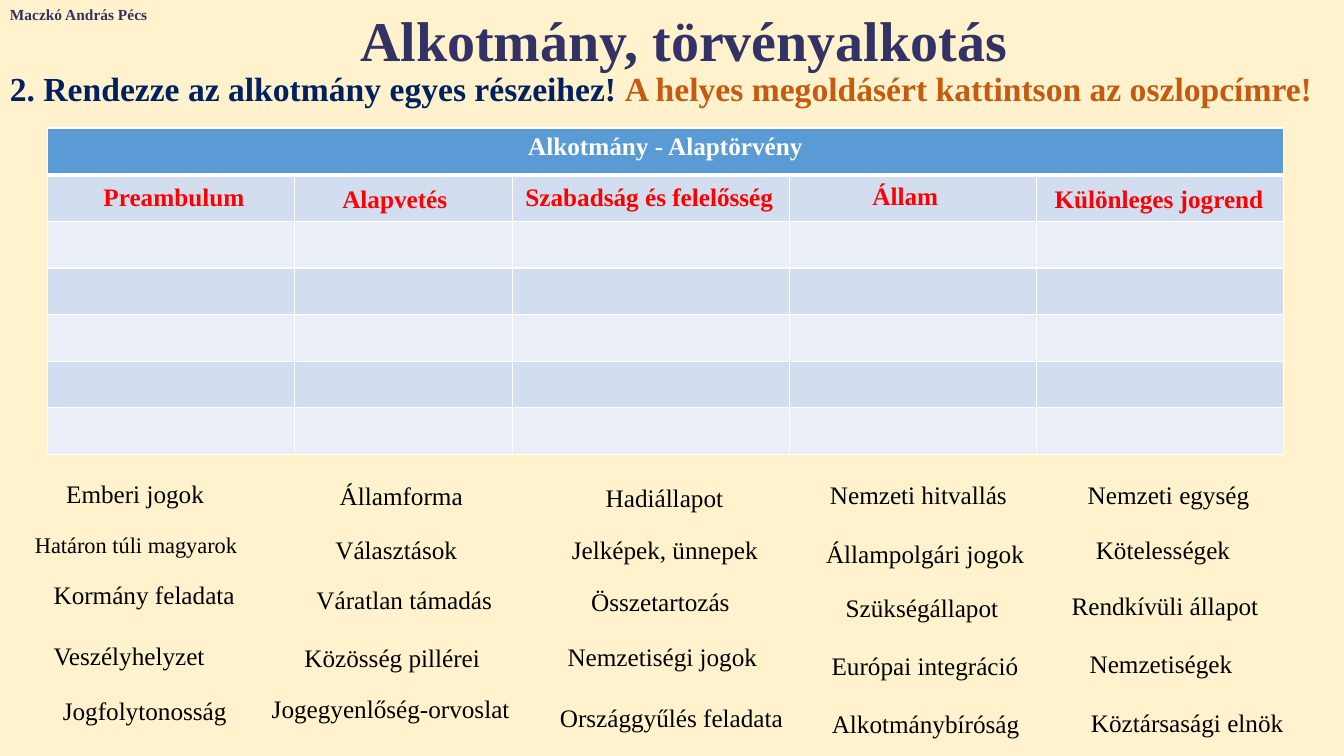
from pptx import Presentation
from pptx.dml.color import RGBColor
from pptx.enum.text import MSO_ANCHOR, MSO_AUTO_SIZE, PP_ALIGN
from pptx.oxml.ns import qn
from pptx.util import Inches, Pt
from lxml import etree

LEFT, CENTER = PP_ALIGN.LEFT, PP_ALIGN.CENTER
TOP = MSO_ANCHOR.TOP
FIT_SHAPE = MSO_AUTO_SIZE.SHAPE_TO_FIT_TEXT

CREAM = RGBColor(0xFF, 0xF2, 0xCC)
INDIGO = RGBColor(0x32, 0x32, 0x64)
NAVY = RGBColor(0x00, 0x20, 0x60)
ORANGE = RGBColor(0xC5, 0x5A, 0x11)
RED = RGBColor(0xFF, 0x00, 0x00)
BLACK = RGBColor(0x00, 0x00, 0x00)
WHITE = RGBColor(0xFF, 0xFF, 0xFF)
BLUE = RGBColor(0x5B, 0x9B, 0xD5)
BANDS = (RGBColor(0xEA, 0xEF, 0xF7), RGBColor(0xD2, 0xDE, 0xEF))
FONT = "Times New Roman"

AUTHOR = "Maczkó András Pécs"
TITLE = "Alkotmány, törvényalkotás"
TASK = "2. Rendezze az alkotmány egyes részeihez! "
HINT = "A helyes megoldásért kattintson az oszlopcímre!"
TABLE_TITLE = "Alkotmány - Alaptörvény"
COLUMN_WIDTHS = (2.45, 2.16, 2.75, 2.45, 2.45)
ROW_COUNT = 7
ROW_HEIGHT = 3.24 / ROW_COUNT
LABEL_HEIGHT = 0.4

HEADINGS = [
    ("Preambulum", 0.92, 1.75, 1.61),
    ("Alapvetés", 3.29, 1.77, 1.25),
    ("Szabadság és felelősség", 5.1, 1.75, 2.68),
    ("Állam", 8.55, 1.74, 0.86),
    ("Különleges jogrend", 10.35, 1.77, 2.29),
]
SMALL_TERM = ("Határon túli magyarok", 0.23, 5.22, 2.24)
TERMS = [
    ("Emberi jogok", 0.55, 4.7, 1.58),
    ("Kormány feladata", 0.42, 5.7, 2.02),
    ("Veszélyhelyzet", 0.42, 6.3, 1.72),
    ("Jogfolytonosság", 0.29, 6.85, 2.29),
    ("Államforma", 3.26, 4.72, 1.44),
    ("Választások", 3.22, 5.25, 1.42),
    ("Váratlan támadás", 3.03, 5.75, 1.96),
    ("Közösség pillérei", 2.68, 6.32, 2.42),
    ("Jogegyenlőség-orvoslat", 2.58, 6.83, 2.59),
    ("Hadiállapot", 5.9, 4.74, 1.38),
    ("Jelképek, ünnepek", 5.56, 5.25, 2.07),
    ("Összetartozás", 5.34, 5.77, 2.42),
    ("Nemzetiségi jogok", 5.52, 6.31, 2.1),
    ("Országgyűlés feladata", 5.44, 6.92, 2.44),
    ("Nemzeti hitvallás", 7.98, 4.71, 2.26),
    ("Állampolgári jogok", 8.08, 5.29, 2.19),
    ("Szükségállapot", 8.28, 5.83, 1.73),
    ("Európai integráció", 8.14, 6.4, 2.07),
    ("Alkotmánybíróság", 8.14, 6.98, 2.08),
    ("Nemzeti egység", 10.38, 4.71, 2.42),
    ("Kötelességek", 10.76, 5.25, 1.55),
    ("Rendkívüli állapot", 10.52, 5.81, 2.07),
    ("Nemzetiségek", 10.7, 6.38, 1.63),
    ("Köztársasági elnök", 10.71, 6.97, 2.13),
]


def write(frame, runs, size, bold=False, align=CENTER):
    paragraph = frame.paragraphs[0]
    paragraph.alignment = align
    paragraph.line_spacing = 1.0
    for text, color in runs:
        run = paragraph.add_run()
        run.text = text
        run.font.name = FONT
        run.font.size = Pt(size)
        run.font.bold = bold
        run.font.color.rgb = color


def add_text(slide, box, runs, size, bold=False, align=CENTER, wrap=False):
    frame = slide.shapes.add_textbox(*map(Inches, box)).text_frame
    frame.word_wrap = wrap
    frame.auto_size = FIT_SHAPE
    write(frame, runs, size, bold, align)


def add_borders(cell, widths):
    properties = cell._tc.get_or_add_tcPr()
    for side, width in widths.items():
        line = etree.SubElement(properties, qn(f"a:ln{side}"), w=str(Pt(width)))
        fill = etree.SubElement(line, qn("a:solidFill"))
        etree.SubElement(fill, qn("a:srgbClr"), val=str(WHITE))


def add_constitution_table(slide):
    table = slide.shapes.add_table(
        ROW_COUNT, len(COLUMN_WIDTHS), Inches(0.47), Inches(1.27),
        Inches(sum(COLUMN_WIDTHS)), Inches(ROW_HEIGHT * ROW_COUNT)).table
    for column, width in zip(table.columns, COLUMN_WIDTHS):
        column.width = Inches(width)
    for index, row in enumerate(table.rows):
        row.height = Inches(ROW_HEIGHT)
        for cell in row.cells:
            add_borders(cell, {"L": 1, "R": 1, "T": 3 if index == 1 else 1,
                               "B": 3 if index == 0 else 1})
            cell.fill.solid()
            cell.fill.fore_color.rgb = BANDS[index % 2] if index else BLUE
    header = table.cell(0, 0)
    header.merge(table.cell(0, len(COLUMN_WIDTHS) - 1))
    write(header.text_frame, [(TABLE_TITLE, WHITE)], 18, bold=True)


def main():
    deck = Presentation()
    deck.slide_width, deck.slide_height = Inches(13.33), Inches(7.5)
    slide = deck.slides.add_slide(deck.slide_layouts[5])
    slide.background.fill.solid()
    slide.background.fill.fore_color.rgb = CREAM

    title = slide.shapes.title
    title.left, title.top = Inches(1.68), Inches(0)
    title.width, title.height = Inches(10.2), Inches(0.77)
    title.text_frame.vertical_anchor = TOP
    title.text_frame.auto_size = FIT_SHAPE
    write(title.text_frame, [(TITLE, INDIGO)], 40, bold=True)

    add_text(slide, (0, 0, 1.59, 0.29), [(AUTHOR, INDIGO)], 11, True, LEFT)
    add_text(slide, (0, 0.62, 13.33, 0.5), [(TASK, NAVY), (HINT, ORANGE)],
             24, True, LEFT, True)
    add_constitution_table(slide)

    groups = (([SMALL_TERM], 16, BLACK, False), (TERMS, 18, BLACK, False),
              (HEADINGS, 18, RED, True))
    for labels, size, color, bold in groups:
        for text, left, top, width in labels:
            add_text(slide, (left, top, width, LABEL_HEIGHT),
                     [(text, color)], size, bold)

    deck.save("out.pptx")


if __name__ == "__main__":
    main()
